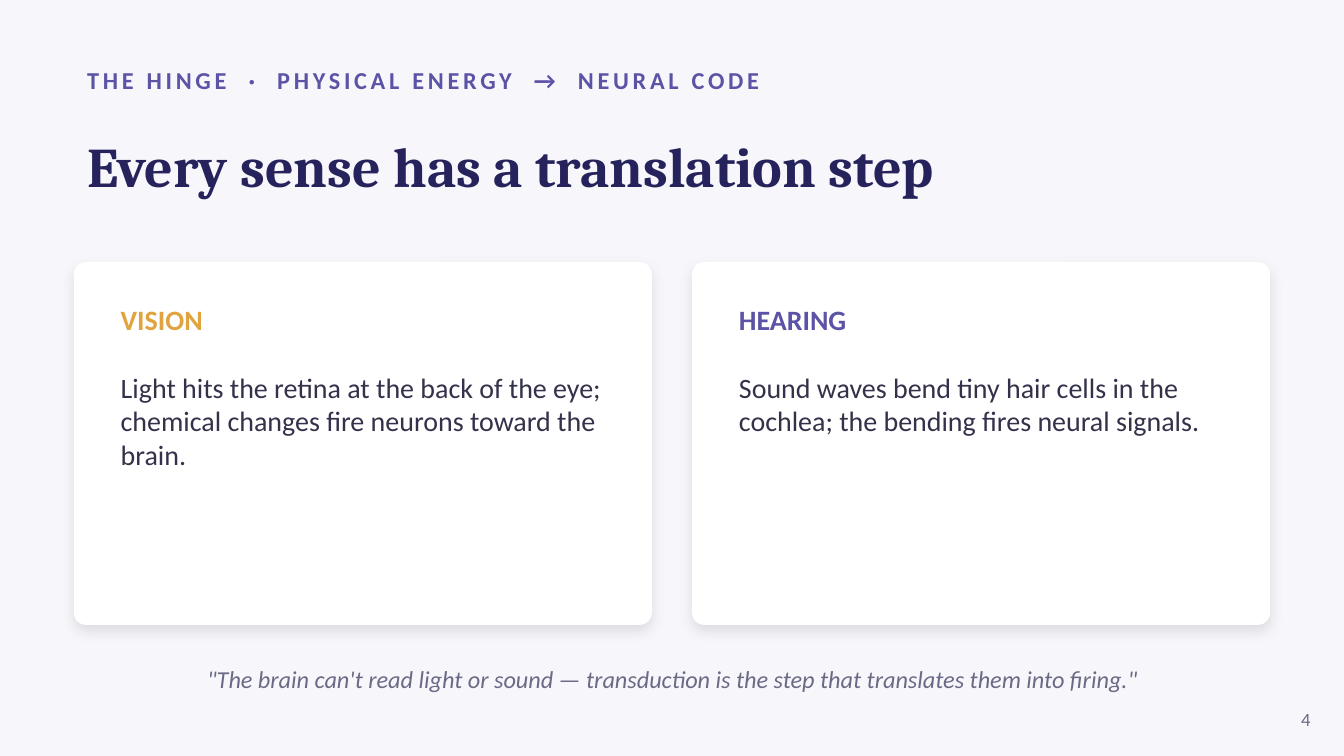
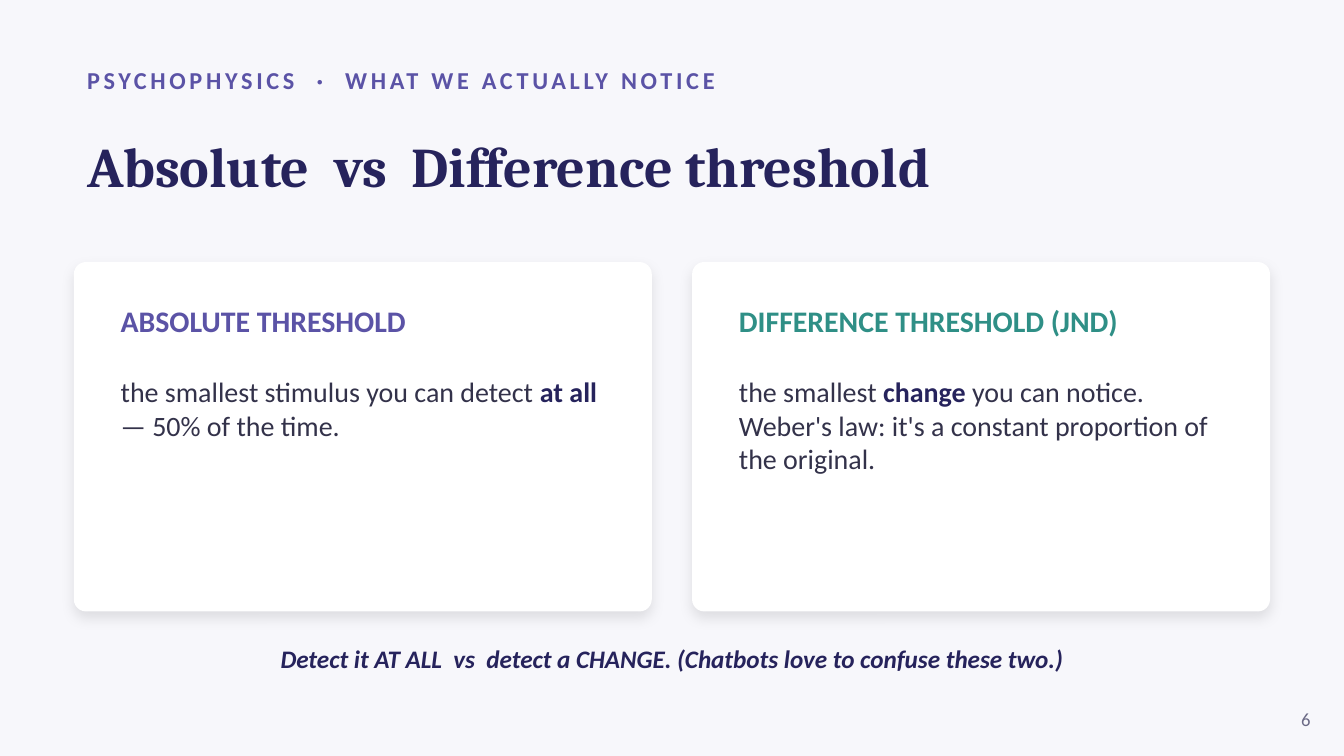
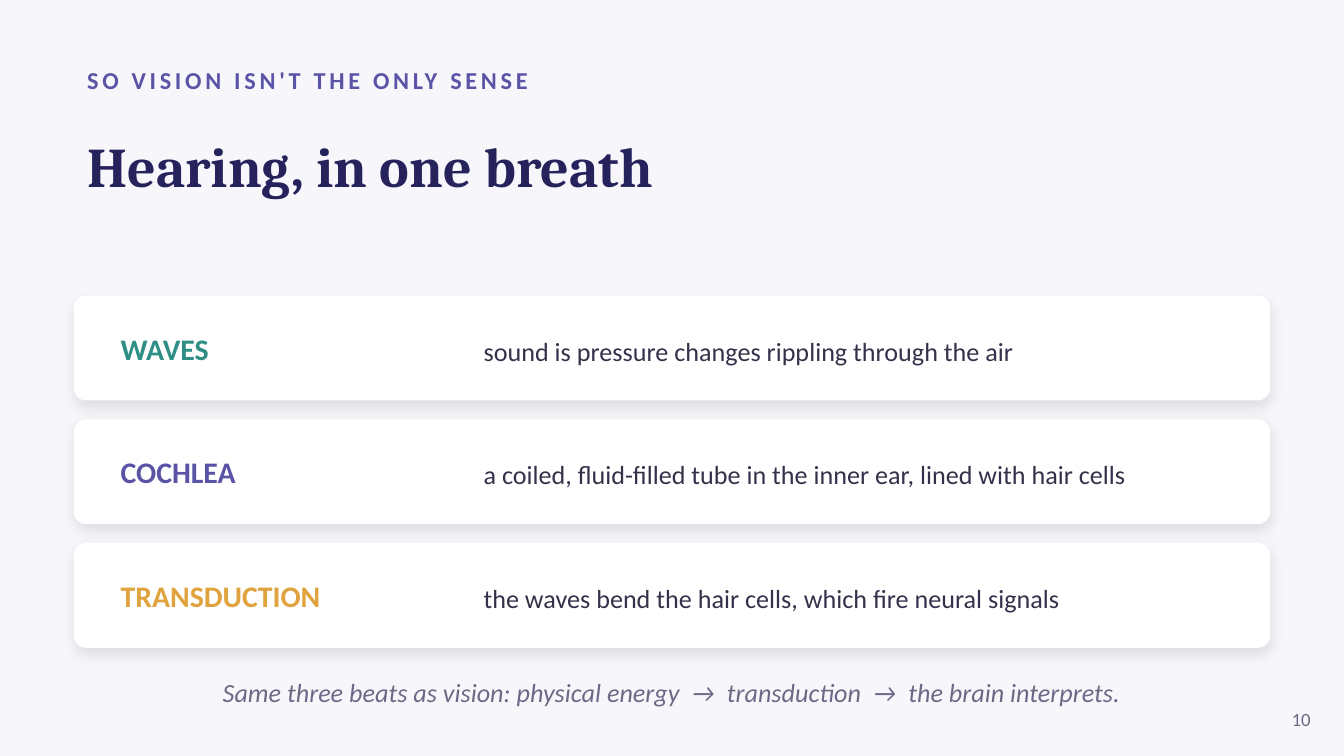
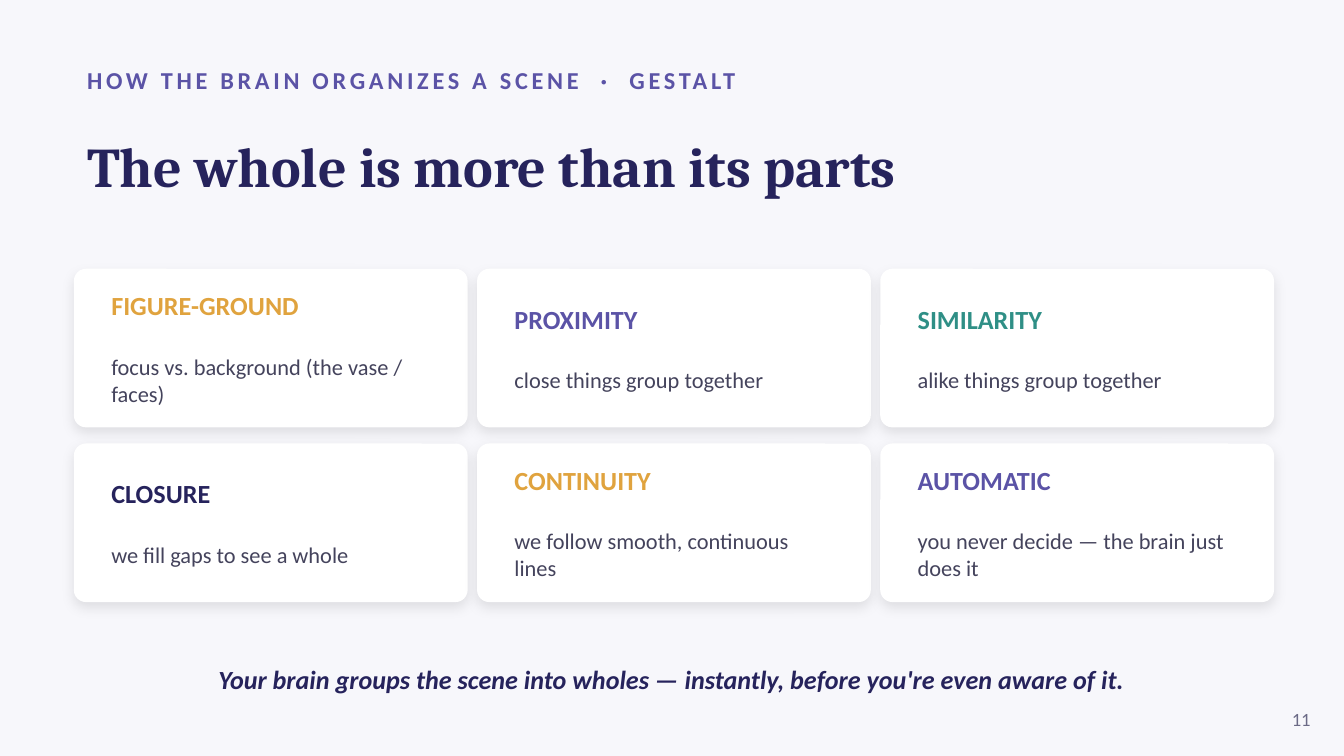
from lxml.etree import SubElement
from pptx import Presentation
from pptx.dml.color import RGBColor
from pptx.enum.shapes import MSO_SHAPE
from pptx.enum.text import MSO_ANCHOR, PP_ALIGN
from pptx.oxml.ns import qn
from pptx.util import Inches, Pt

PAPER, WHITE = "F7F7FB", "FFFFFF"
NAVY, PURPLE, GOLD, TEAL = "26235C", "5B53A6", "E0A33E", "2F8F86"
INK, SLATE, GREY = "33324A", "44435C", "6B6A86"
SANS, SERIF = "Calibri", "Cambria"
LEFT, WIDE = 0.55, 8.9
RADIUS = 0.09
LINE = 1.22  # line height per point of text size

# Body text is a list of parts; every second part is stressed.
SLIDES = [
    dict(
        kind="pair", page=4, tall=2.7, head=15, size=15,
        kicker="THE HINGE  ·  PHYSICAL ENERGY  →  NEURAL CODE",
        title="Every sense has a translation step",
        items=[
            ("VISION", GOLD, ["Light hits the retina at the back of the eye; "
                              "chemical changes fire neurons toward the brain."]),
            ("HEARING", PURPLE, ["Sound waves bend tiny hair cells in the cochlea; "
                                 "the bending fires neural signals."]),
        ],
        close=("\"The brain can't read light or sound — transduction is the step "
               "that translates them into firing.\"", 4.85, 13, GREY, False),
    ),
    dict(
        kind="pair", page=6, tall=2.6, head=16, size=15,
        kicker="PSYCHOPHYSICS  ·  WHAT WE ACTUALLY NOTICE",
        title="Absolute  vs  Difference threshold",
        items=[
            ("ABSOLUTE THRESHOLD", PURPLE,
             ["the smallest stimulus you can detect ", "at all", " — 50% of the time."]),
            ("DIFFERENCE THRESHOLD (JND)", TEAL,
             ["the smallest ", "change", " you can notice. Weber's law: "
              "it's a constant proportion of the original."]),
        ],
        close=("Detect it AT ALL  vs  detect a CHANGE. "
               "(Chatbots love to confuse these two.)", 4.7, 13.5, NAVY, True),
    ),
    dict(
        kind="rows", page=10,
        kicker="SO VISION ISN'T THE ONLY SENSE",
        title="Hearing, in one breath",
        items=[
            ("WAVES", TEAL, "sound is pressure changes rippling through the air"),
            ("COCHLEA", PURPLE,
             "a coiled, fluid-filled tube in the inner ear, lined with hair cells"),
            ("TRANSDUCTION", GOLD,
             "the waves bend the hair cells, which fire neural signals"),
        ],
        close=("Same three beats as vision: physical energy  →  transduction  →  "
               "the brain interprets.", 4.95, 14, GREY, False),
    ),
    dict(
        kind="grid", page=11,
        kicker="HOW THE BRAIN ORGANIZES A SCENE  ·  GESTALT",
        title="The whole is more than its parts",
        items=[
            ("FIGURE-GROUND", GOLD, ["focus vs. background (the vase / faces)"]),
            ("PROXIMITY", PURPLE, ["close things group together"]),
            ("SIMILARITY", TEAL, ["alike things group together"]),
            ("CLOSURE", NAVY, ["we fill gaps to see a whole"]),
            ("CONTINUITY", GOLD, ["we follow smooth, continuous lines"]),
            ("AUTOMATIC", PURPLE, ["you never decide — the brain just does it"]),
        ],
        close=("Your brain groups the scene into wholes — instantly, "
               "before you're even aware of it.", 4.85, 14, NAVY, True),
    ),
]


def color(code):
    return RGBColor.from_string(code)


def style(font, size, code, bold=False, italic=False, face=SANS):
    font.name, font.size, font.bold, font.italic = face, Pt(size), bold, italic
    font.color.rgb = color(code)


def frame(slide, box, anchor=MSO_ANCHOR.MIDDLE):
    """Add a wrapping text box and return its text frame."""
    text = slide.shapes.add_textbox(*map(Inches, box)).text_frame
    text.word_wrap = True
    text.vertical_anchor = anchor
    return text


def label(slide, box, words, size, code, align=PP_ALIGN.LEFT, **look):
    """Add one line of text and return its run."""
    para = frame(slide, box).paragraphs[0]
    para.text = words
    para.alignment = align
    run = para.runs[0]
    style(run.font, size, code, **look)
    return run


def card(slide, box):
    shape = slide.shapes.add_shape(MSO_SHAPE.ROUNDED_RECTANGLE, *map(Inches, box))
    shape.adjustments[0] = RADIUS / min(box[2:])
    shape.fill.solid()
    shape.fill.fore_color.rgb = color(WHITE)
    shape.line.fill.background()
    shape.shadow.inherit = False
    effects = shape._element.spPr.find(qn("a:effectLst"))
    shade = SubElement(effects, qn("a:outerShdw"), blurRad=str(Pt(7)), dist=str(Pt(3)),
                       dir="5400000", algn="bl", rotWithShape="0")
    tint = SubElement(shade, qn("a:srgbClr"), val="000000")
    SubElement(tint, qn("a:alpha"), val="10000")


def story(slide, box, item, head, size, code, anchor):
    """Add a coloured heading with a paragraph under it."""
    name, hue, parts = item
    text = frame(slide, box, anchor)
    top = text.paragraphs[0]
    top.text = name
    top.space_after = Pt(round(head * LINE, 1))
    style(top.runs[0].font, head, hue, bold=True)
    body = text.add_paragraph()
    for i, part in enumerate(parts):
        run = body.add_run()
        run.text = part
        stress = i % 2 == 1
        style(run.font, size, NAVY if stress else code, bold=stress)


def pair(slide, data):
    top, wide, gap, pad = 1.95, 4.3, 0.3, 0.25
    tall = data["tall"]
    spots = [LEFT + i * (wide + gap) for i in range(2)]
    for left in spots:
        card(slide, (left, top, wide, tall))
    for left, item in zip(spots, data["items"]):
        story(slide, (left + pad, top + pad, wide - 2 * pad, tall - 0.4), item,
              data["head"], data["size"], INK, MSO_ANCHOR.TOP)


def rows(slide, data):
    tall, gap = 0.78, 0.14
    for i, (name, hue, words) in enumerate(data["items"]):
        top = 2.2 + i * (tall + gap)
        card(slide, (LEFT, top, WIDE, tall))
        label(slide, (0.8, top + 0.18, 2.6, 0.42), name, 16, hue, bold=True)
        label(slide, (3.5, top + 0.2, 5.7, 0.42), words, 14, INK)


def grid(slide, data):
    wide, tall, padx, pady = 2.93, 1.18, 0.18, 0.12
    for i, item in enumerate(data["items"]):
        row, col = divmod(i, 3)
        left, top = LEFT + col * 3, 2 + row * 1.3
        card(slide, (left, top, wide, tall))
        story(slide, (left + padx, top + pady, wide - 2 * padx, tall - 2 * pady),
              item, 14, 12, SLATE, MSO_ANCHOR.MIDDLE)


def build(deck, data):
    slide = deck.slides.add_slide(deck.slide_layouts[6])
    slide.background.fill.solid()
    slide.background.fill.fore_color.rgb = color(PAPER)
    kicker = label(slide, (LEFT, 0.42, 9, 0.35), data["kicker"], 13, PURPLE, bold=True)
    kicker.font._element.set("spc", "200")
    label(slide, (LEFT, 0.78, WIDE, 0.9), data["title"], 30, NAVY, bold=True, face=SERIF)
    {"pair": pair, "rows": rows, "grid": grid}[data["kind"]](slide, data)
    words, top, size, code, bold = data["close"]
    label(slide, (LEFT, top, WIDE, 0.4), words, size, code, PP_ALIGN.CENTER,
          bold=bold, italic=True)
    label(slide, (9.35, 5.2, 0.5, 0.3), str(data["page"]), 10, GREY, PP_ALIGN.RIGHT)


def main():
    deck = Presentation()
    deck.slide_width = Inches(10)
    deck.slide_height = deck.slide_width * 9 // 16
    for data in SLIDES:
        build(deck, data)
    deck.save("out.pptx")


if __name__ == "__main__":
    main()
